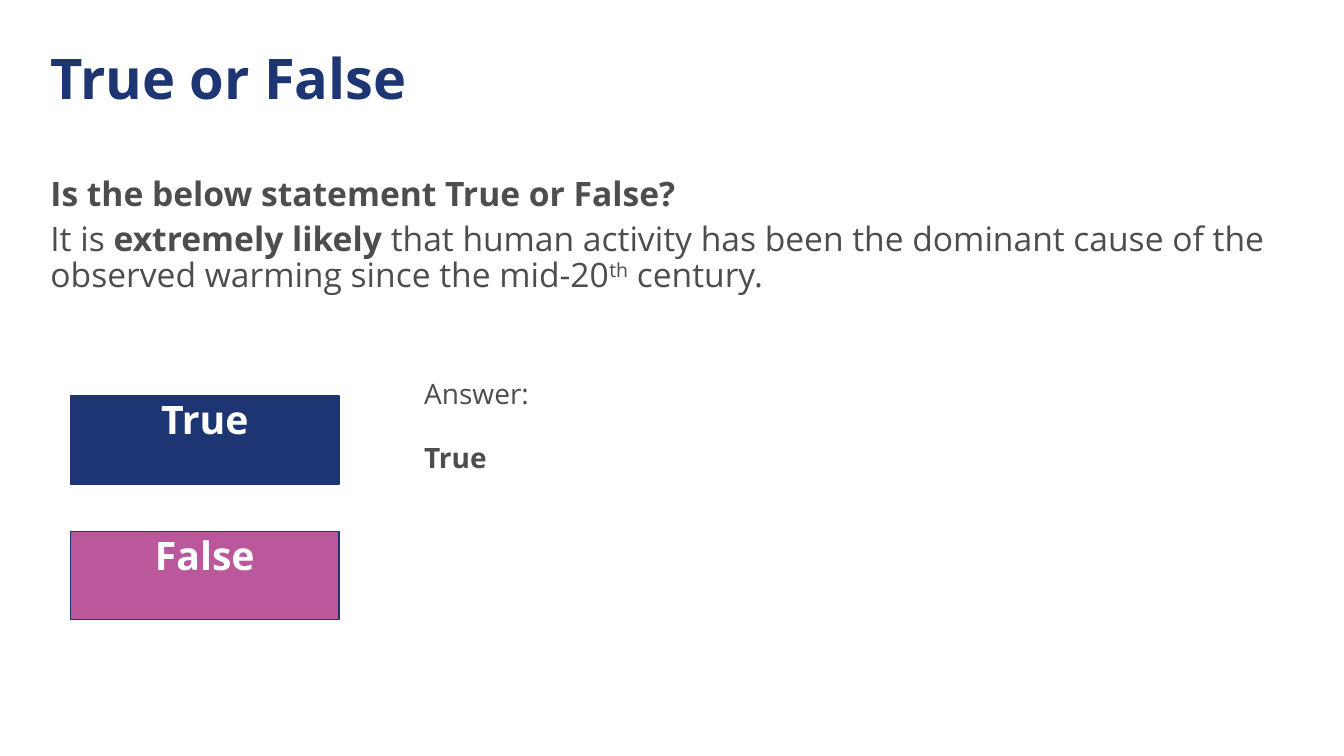
from dataclasses import dataclass

from pptx import Presentation
from pptx.dml.color import RGBColor
from pptx.enum.shapes import MSO_SHAPE
from pptx.enum.text import MSO_ANCHOR, PP_ALIGN
from pptx.util import Emu, Pt

PX = 9525
FONT = "Open Sans"
NAVY, PINK, GREY, WHITE = "1D3673", "BB579B", "4C4D4C", "FFFFFF"


@dataclass
class Run:
    text: str
    bold: bool = False
    superscript: bool = False


@dataclass
class Para:
    runs: list[Run]
    before: float = 0
    after: float = 0


@dataclass
class TextBlock:
    box: tuple[int, int, int, int]
    size: int
    color: str
    paras: list[Para]


@dataclass
class Button:
    label: str
    fill: str


def px(n: int) -> Emu:
    return Emu(n * PX)


def rgb(color: str) -> RGBColor:
    return RGBColor.from_string(color)


def write(tf, paras: list[Para], size: int, color: str, align=PP_ALIGN.LEFT) -> None:
    tf.word_wrap = True
    tf.vertical_anchor = MSO_ANCHOR.TOP
    for i, para in enumerate(paras):
        p = tf.paragraphs[0] if i == 0 else tf.add_paragraph()
        p.alignment = align
        p.line_spacing = 0.9
        p.space_before = Pt(para.before)
        p.space_after = Pt(para.after)
        for run in para.runs:
            r = p.add_run()
            r.text = run.text
            r.font.name = FONT
            r.font.size = Pt(size)
            r.font.bold = run.bold
            r.font.color.rgb = rgb(color)
            if run.superscript:
                r._r.get_or_add_rPr().set("baseline", "30000")


def add_text(slide, block: TextBlock) -> None:
    tf = slide.shapes.add_textbox(*map(px, block.box)).text_frame
    tf.margin_left = tf.margin_top = tf.margin_right = tf.margin_bottom = 0
    write(tf, block.paras, block.size, block.color)


def add_button(slide, button: Button, top: int) -> None:
    sp = slide.shapes.add_shape(MSO_SHAPE.RECTANGLE, px(67), px(top), px(256), px(84))
    sp.shadow.inherit = False
    sp.fill.solid()
    sp.fill.fore_color.rgb = rgb(button.fill)
    sp.line.color.rgb = rgb(NAVY)
    sp.line.width = Pt(1)
    write(sp.text_frame, [Para([Run(button.label, True)])], 28, WHITE, PP_ALIGN.CENTER)


TITLE = TextBlock((48, 49, 1184, 102), 40, NAVY, [Para([Run("True or False", True)])])
QUESTION = TextBlock((48, 169, 1184, 465), 24, GREY, [
    Para([Run("Is the below statement True or False?", True)], after=6),
    Para([
        Run("It is "),
        Run("extremely likely ", True),
        Run("that human activity has been the dominant cause of the "
            "observed warming since the mid-20"),
        Run("th", superscript=True),
        Run(" century."),
    ], after=6),
])
ANSWER = TextBlock((404, 362, 828, 266), 20, GREY, [
    Para([Run("Answer:")]),
    Para([Run("True", True)], before=24.5),
])
BUTTONS = [Button("True", NAVY), Button("False", PINK)]


def main() -> None:
    prs = Presentation()
    prs.slide_width, prs.slide_height = px(1280), px(720)
    s = prs.slides.add_slide(prs.slide_layouts[6])

    # Title and statement
    add_text(s, TITLE)
    add_text(s, QUESTION)

    # Answer buttons
    for i, button in enumerate(BUTTONS):
        add_button(s, button, 377 + i * 129)

    # Solution
    add_text(s, ANSWER)
    prs.save("out.pptx")


if __name__ == "__main__":
    main()
